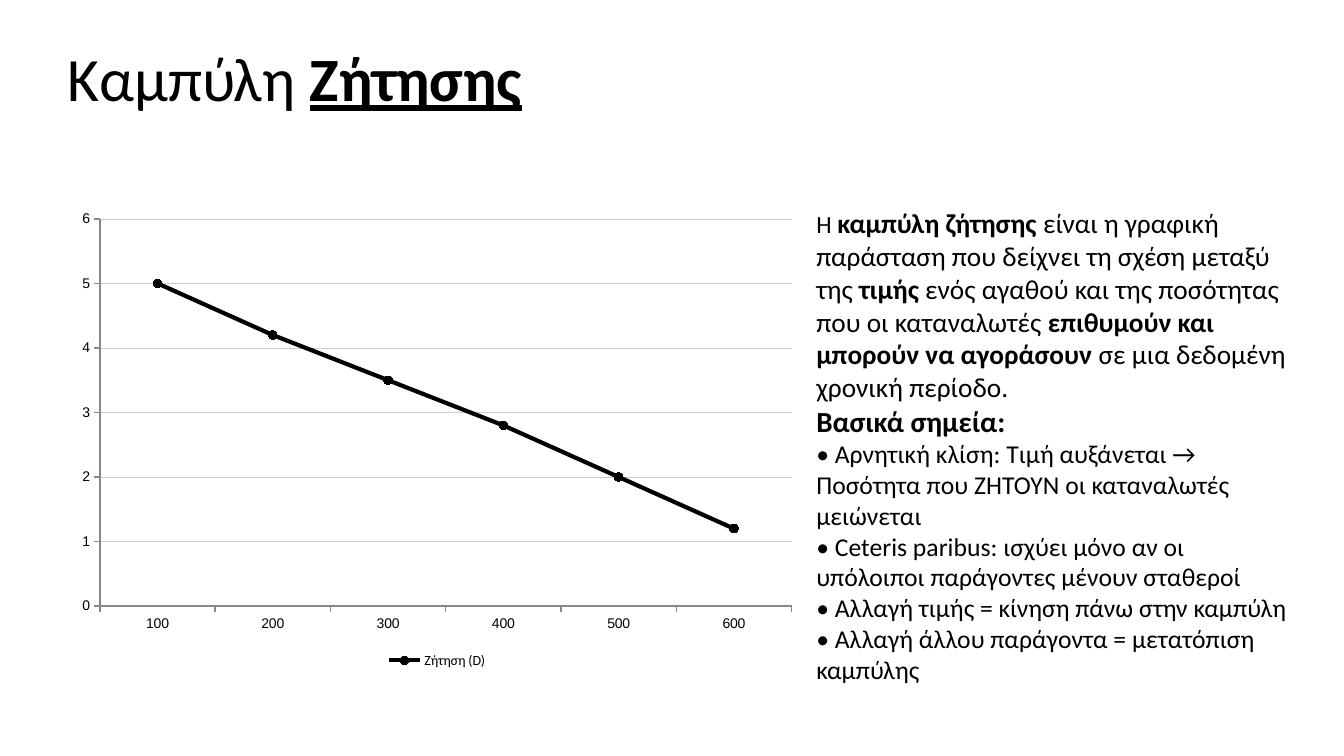
from pptx import Presentation
from pptx.chart.data import CategoryChartData
from pptx.dml.color import RGBColor
from pptx.enum.chart import XL_CHART_TYPE, XL_LEGEND_POSITION, XL_MARKER_STYLE, XL_TICK_MARK
from pptx.enum.text import MSO_ANCHOR, MSO_AUTO_SIZE, PP_ALIGN
from pptx.util import Inches, Pt

LINE_MARKERS = XL_CHART_TYPE.LINE_MARKERS
BOTTOM = XL_LEGEND_POSITION.BOTTOM
CIRCLE = XL_MARKER_STYLE.CIRCLE
OUTSIDE, NO_TICK = XL_TICK_MARK.OUTSIDE, XL_TICK_MARK.NONE
TOP, LEFT, FIXED = MSO_ANCHOR.TOP, PP_ALIGN.LEFT, MSO_AUTO_SIZE.NONE

BLACK = RGBColor(0x00, 0x00, 0x00)
AXIS_GRAY = RGBColor(0x88, 0x88, 0x88)
GRID_GRAY = RGBColor(0xCC, 0xCC, 0xCC)

# Each run: text, format values
BOLD = {"bold": True}
TITLE = [[("Καμπύλη ", {}), ("Ζήτησης", {"bold": True, "underline": True})]]

DEMAND_NAME = "Ζήτηση (D)"
DEMAND = {"100": 5, "200": 4.2, "300": 3.5, "400": 2.8, "500": 2, "600": 1.2}

DEFINITION = [
    ("Η\u00a0", {"size": Pt(17.6)}),
    ("καμπύλη ζήτησης", BOLD),
    ("\u00a0είναι η γραφική παράσταση που δείχνει τη σχέση μεταξύ της ", {}),
    ("τιμής", BOLD),
    (" ενός αγαθού και της ποσότητας που οι καταναλωτές ", {}),
    ("επιθυμούν και μπορούν να αγοράσουν", BOLD),
    (" σε μια δεδομένη χρονική περίοδο.", {}),
]
KEY_HEADING = [("Βασικά σημεία:", {"size": Pt(20.8), "bold": True})]
KEY_POINTS = [
    "• Αρνητική κλίση: Τιμή αυξάνεται → Ποσότητα που ΖΗΤΟΥΝ οι καταναλωτές μειώνεται",
    "• Ceteris paribus: ισχύει μόνο αν οι υπόλοιποι παράγοντες μένουν σταθεροί",
    "• Αλλαγή τιμής = κίνηση πάνω στην καμπύλη",
    "• Αλλαγή άλλου παράγοντα = μετατόπιση καμπύλης",
]
EXPLANATION = [DEFINITION, KEY_HEADING] + [
    [(point, {"size": Pt(18.3)})] for point in KEY_POINTS]

# Slide layout in inches
WIDTH, HEIGHT = 13.33, 7.5
MARGIN, TITLE_TOP, BODY_TOP, BODY_HEIGHT = 0.67, 0.4, 2, 4.67
SPLIT = WIDTH * 0.6
TITLE_AREA = (MARGIN, TITLE_TOP, WIDTH - 2 * MARGIN, BODY_TOP - TITLE_TOP)
CHART_AREA = (MARGIN, BODY_TOP, SPLIT - MARGIN, BODY_HEIGHT)
TEXT_AREA = (SPLIT, BODY_TOP, 4.93, BODY_HEIGHT)


def set_values(target, values):
    for name, value in values.items():
        setattr(target, name, value)


def format_font(font, **values):
    set_values(font, values)
    font.color.rgb = BLACK


def format_line(line, color, width):
    line.color.rgb = color
    line.width = Pt(width)


def write_paragraphs(frame, paragraphs, size):
    set_values(frame, {"word_wrap": True, "vertical_anchor": TOP, "auto_size": FIXED})
    for index, runs in enumerate(paragraphs):
        paragraph = frame.paragraphs[0] if index == 0 else frame.add_paragraph()
        paragraph.alignment = LEFT
        for text, values in runs:
            run = paragraph.add_run()
            run.text = text
            format_font(run.font, **{"name": "Calibri", "size": size, **values})


def add_title(slide):
    title = slide.shapes.title
    title.left, title.top, title.width, title.height = map(Inches, TITLE_AREA)
    frame = title.text_frame
    set_values(frame, {"margin_left": 0, "margin_top": 0,
                       "margin_right": 0, "margin_bottom": 0})
    write_paragraphs(frame, TITLE, Pt(44))


def add_demand_chart(slide):
    data = CategoryChartData()
    data.categories = list(DEMAND)
    data.add_series(DEMAND_NAME, list(DEMAND.values()))
    chart = slide.shapes.add_chart(LINE_MARKERS, *map(Inches, CHART_AREA), data).chart
    set_values(chart, {"has_title": False, "has_legend": True})
    set_values(chart.legend, {"position": BOTTOM, "include_in_layout": False})
    format_font(chart.font, name="Calibri", size=Pt(10))

    for axis in (chart.category_axis, chart.value_axis):
        set_values(axis, {"major_tick_mark": OUTSIDE, "minor_tick_mark": NO_TICK})
        format_font(axis.tick_labels.font, name="Arial", size=Pt(10))
        format_line(axis.format.line, AXIS_GRAY, 1)
    set_values(chart.value_axis, {"minimum_scale": 0, "maximum_scale": 6, "major_unit": 1})
    format_line(chart.value_axis.major_gridlines.format.line, GRID_GRAY, 0.5)

    chart.plots[0].vary_by_categories = False
    demand = chart.plots[0].series[0]
    demand.smooth = False
    format_line(demand.format.line, BLACK, 3)
    set_values(demand.marker, {"style": CIRCLE, "size": 6})
    demand.marker.format.fill.solid()
    demand.marker.format.fill.fore_color.rgb = BLACK
    demand.marker.format.line.color.rgb = BLACK


def add_explanation(slide):
    frame = slide.shapes.add_textbox(*map(Inches, TEXT_AREA)).text_frame
    write_paragraphs(frame, EXPLANATION, Pt(19.5))


def main():
    presentation = Presentation()
    presentation.slide_width, presentation.slide_height = Inches(WIDTH), Inches(HEIGHT)
    slide = presentation.slides.add_slide(presentation.slide_layouts[5])
    add_title(slide)
    add_demand_chart(slide)
    add_explanation(slide)
    presentation.save("out.pptx")


if __name__ == "__main__":
    main()
